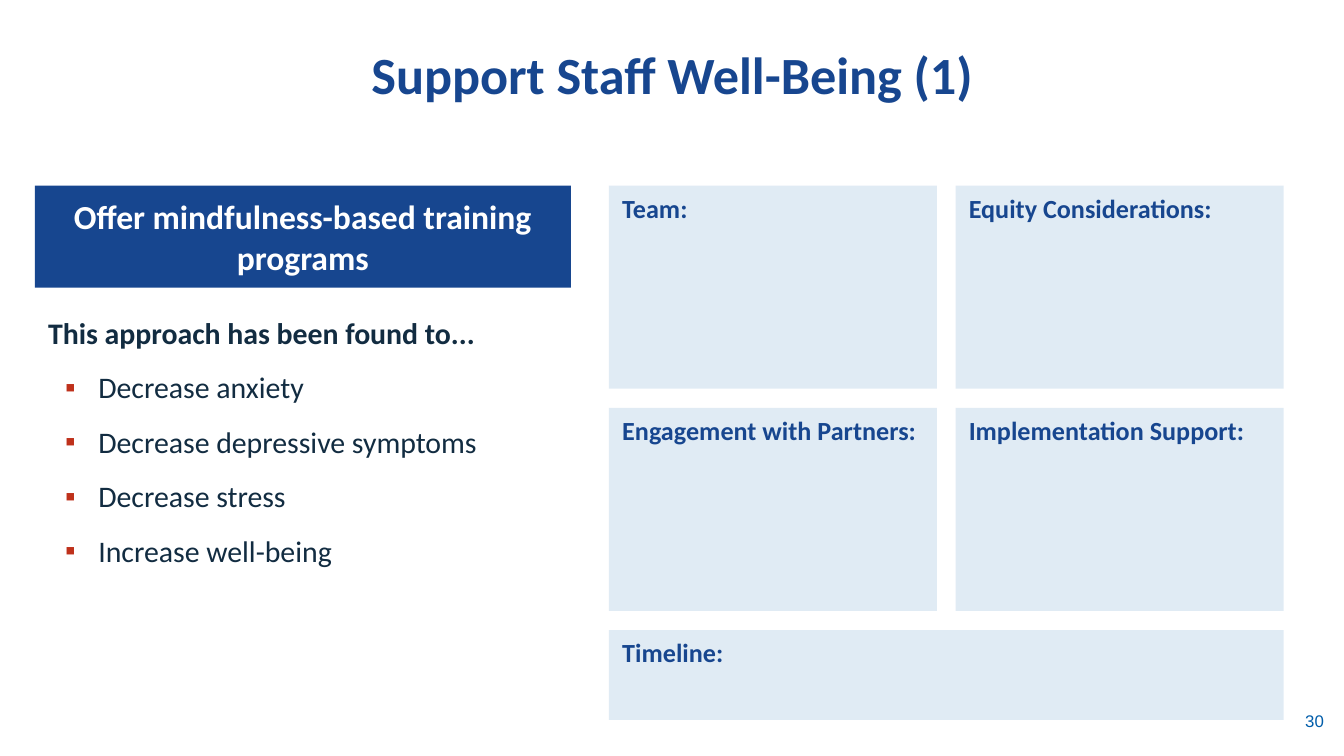
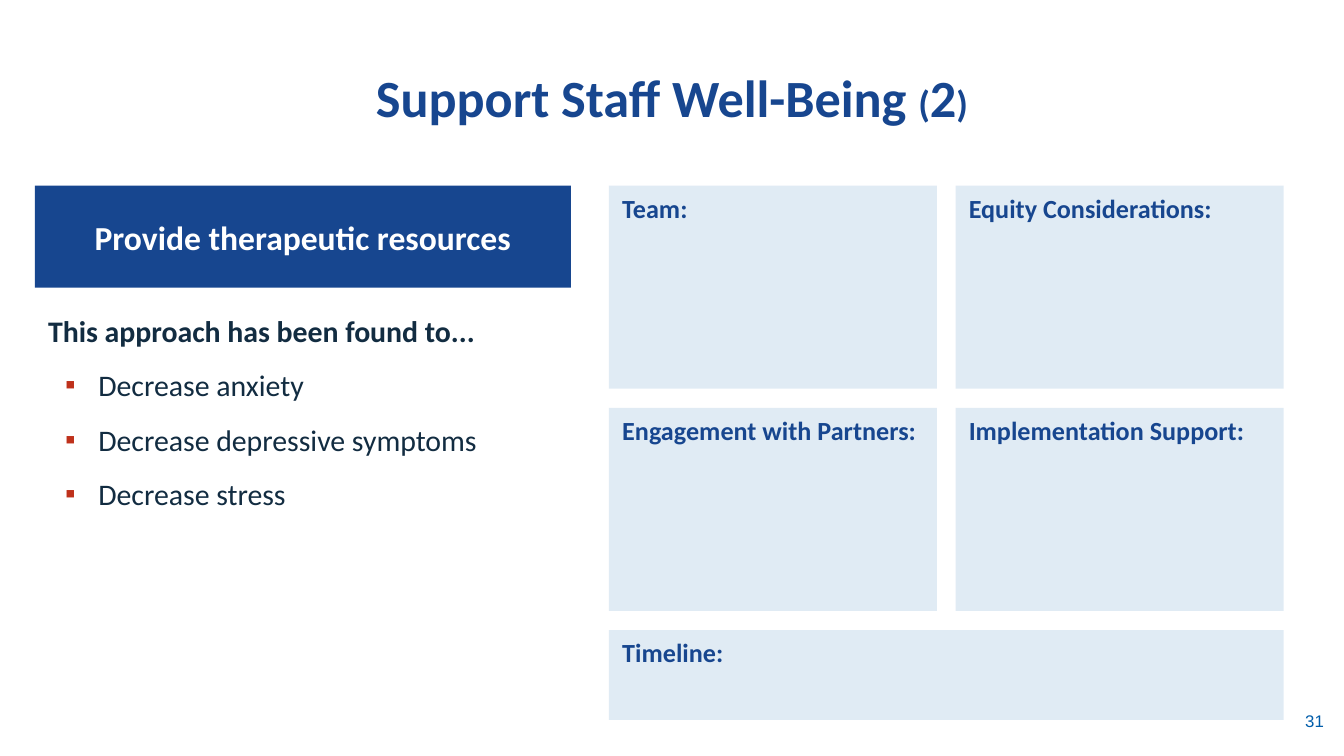
from lxml import etree
from pptx import Presentation
from pptx.dml.color import RGBColor
from pptx.enum.shapes import MSO_SHAPE as Shape
from pptx.enum.text import MSO_ANCHOR as Anchor, PP_ALIGN as Align
from pptx.oxml.ns import qn
from pptx.util import Cm, Pt

NAVY, PALE_BLUE, INK = "17468F", "86B2D7", "122C41"
RED, NUMBER_BLUE, WHITE = "BF311B", "015DAA", "FFFFFF"
color = RGBColor.from_string

# Planning cards: column, row, width, height, label
CARD_LEFT, CARD_TOP = 11.51, 3.51
COLUMN_STEP, ROW_STEP = 6.55, 4.2
CARD_WIDTH, CARD_HEIGHT = 6.2, 3.84
CARDS = [
    (0, 0, CARD_WIDTH, CARD_HEIGHT, "Team:"),
    (1, 0, CARD_WIDTH, CARD_HEIGHT, "Equity Considerations:"),
    (0, 1, CARD_WIDTH, CARD_HEIGHT, "Engagement with Partners:"),
    (1, 1, CARD_WIDTH, CARD_HEIGHT, "Implementation Support:"),
    (0, 2, COLUMN_STEP + CARD_WIDTH, 1.7, "Timeline:"),
]

BENEFITS = ["Decrease anxiety", "Decrease depressive symptoms", "Decrease stress"]
PAGES = [
    {"number": "30", "title": [("Support Staff Well-Being (1)", 28)],
     "title_top": 0, "title_height": 2.11, "body_top": 5.82,
     "banner": "Offer mindfulness-based training programs",
     "benefits": BENEFITS + ["Increase well-being"]},
    {"number": "31", "title": [("Support Staff Well-Being ", 28), ("(", 20),
                               ("2", 28), (")", 20)],
     "title_top": 0.15, "title_height": 2.39, "body_top": 5.78,
     "banner": "Provide therapeutic resources",
     "benefits": BENEFITS},
]


def add_box(page, left, top, width, height, fill=None, alpha=None, anchor=Anchor.TOP):
    """Add a text box, or a filled rectangle when a fill is given."""
    place = Cm(left), Cm(top), Cm(width), Cm(height)
    if fill:
        box = page.shapes.add_shape(Shape.RECTANGLE, *place)
        box.shadow.inherit = False
        box.line.fill.background()
        box.fill.solid()
        box.fill.fore_color.rgb = color(fill)
        if alpha:
            tint = box.fill._xPr.find(".//" + qn("a:srgbClr"))
            etree.SubElement(tint, qn("a:alpha"), val=str(alpha * 1000))
    else:
        box = page.shapes.add_textbox(*place)
    box.text_frame.word_wrap = True
    box.text_frame.vertical_anchor = anchor
    return box


def write(para, text, size=14, hue=NAVY, bold=True, font="Calibri",
          align=Align.LEFT, before=0, line=None, bullet=None):
    """Add a span to a paragraph and format both."""
    if bullet:
        props = para._p.get_or_add_pPr()
        props.set("marL", str(Cm(0.95)))
        props.set("indent", str(-Cm(0.63)))
        tint = etree.SubElement(props, qn("a:buClr"))
        etree.SubElement(tint, qn("a:srgbClr"), val=RED)
        etree.SubElement(props, qn("a:buFont"), typeface="Arial")
        etree.SubElement(props, qn("a:buChar"), char=bullet)
    para.alignment = align
    para.space_before = Pt(before)
    if line:
        para.line_spacing = Pt(line)
    span = para.add_run()
    span.text = text
    span.font.name = font
    span.font.size = Pt(size)
    span.font.bold = bold
    span.font.color.rgb = color(hue)


deck = Presentation()
deck.slide_width, deck.slide_height = Cm(25.4), Cm(14.29)

for content in PAGES:
    page = deck.slides.add_slide(deck.slide_layouts[6])

    # Title
    box = add_box(page, 1.27, content["title_top"], 22.86, content["title_height"],
                  anchor=Anchor.BOTTOM)
    for text, size in content["title"]:
        write(box.text_frame.paragraphs[0], text, size=size, align=Align.CENTER, line=30)

    # Banner naming the approach
    box = add_box(page, 0.66, CARD_TOP, 10.13, 1.93, fill=NAVY, anchor=Anchor.MIDDLE)
    write(box.text_frame.paragraphs[0], content["banner"], size=18, hue=WHITE,
          align=Align.CENTER)

    # Benefits list
    benefits = content["benefits"]
    box = add_box(page, 0.66, content["body_top"], 10.13, 0.96 * (len(benefits) + 1))
    write(box.text_frame.paragraphs[0], "This approach has been found to...",
          size=16, hue=INK)
    for benefit in benefits:
        write(box.text_frame.add_paragraph(), benefit, size=16, hue=INK, bold=False,
              before=10, bullet="▪")

    # Planning cards
    for column, row, width, height, label in CARDS:
        box = add_box(page, CARD_LEFT + column * COLUMN_STEP, CARD_TOP + row * ROW_STEP,
                      width, height, fill=PALE_BLUE, alpha=25)
        write(box.text_frame.paragraphs[0], label)

    # Page number
    box = add_box(page, 23.09, 13.31, 2.18, 0.76)
    write(box.text_frame.paragraphs[0], content["number"], size=9, hue=NUMBER_BLUE,
          bold=False, font="Arial", align=Align.RIGHT)

deck.save("out.pptx")
